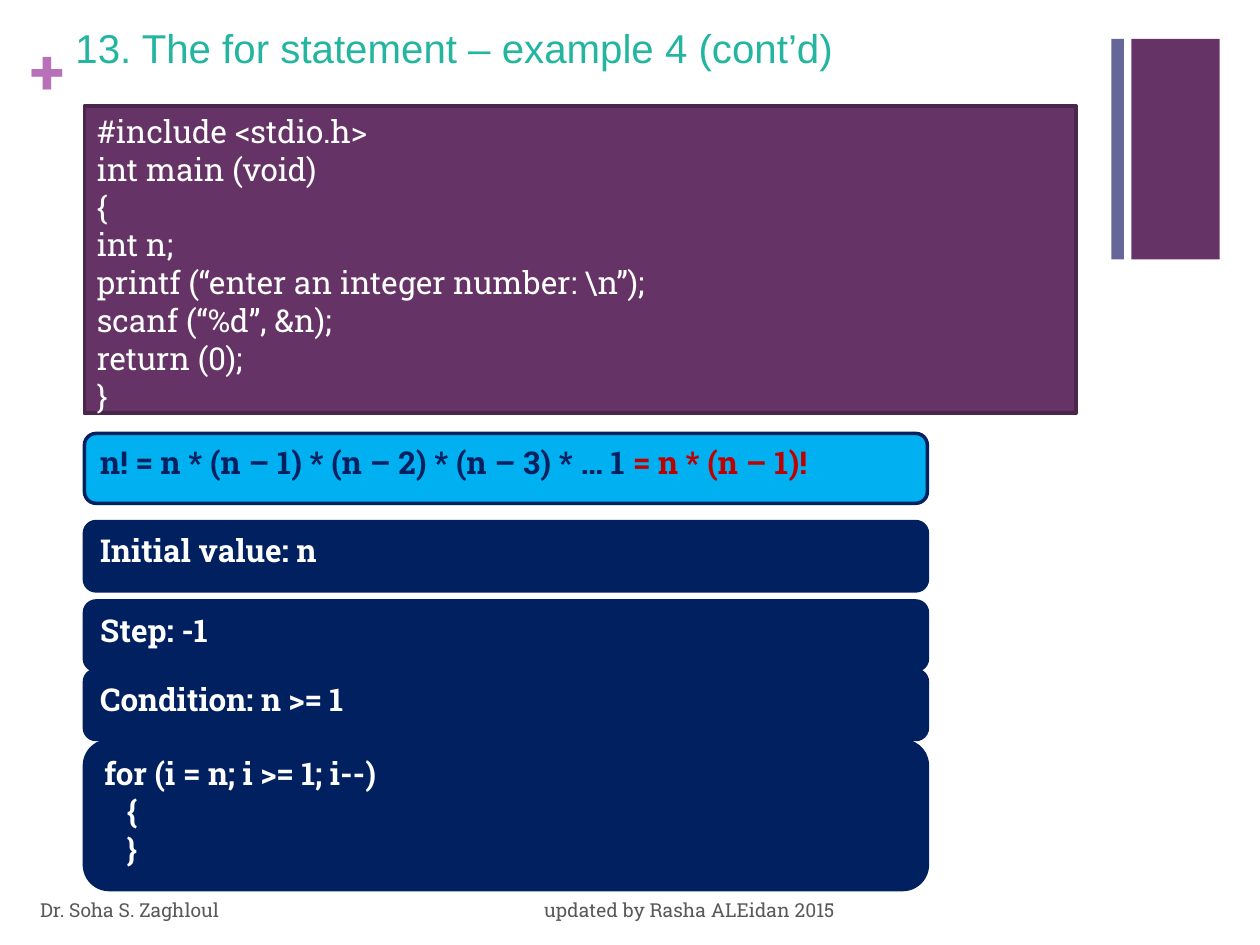
"""Build the slide on the for statement, example 4, with its code and loop steps."""
import pptx
import pptx.dml.color
import pptx.enum.shapes
import pptx.enum.text
import pptx.oxml
import pptx.oxml.ns
import pptx.util

RGBColor = pptx.dml.color.RGBColor
MSO_SHAPE = pptx.enum.shapes.MSO_SHAPE
MSO_ANCHOR = pptx.enum.text.MSO_ANCHOR
PP_ALIGN = pptx.enum.text.PP_ALIGN

WHITE = RGBColor(0xFF, 0xFF, 0xFF)
PURPLE = RGBColor(0x66, 0x33, 0x66)
DARK_PURPLE = RGBColor(0x4B, 0x26, 0x4B)
SLATE = RGBColor(0x66, 0x66, 0x99)
ORCHID = RGBColor(0xB8, 0x70, 0xB8)
TEAL = RGBColor(0x24, 0xB5, 0xA1)
SKY = RGBColor(0x00, 0xB0, 0xF0)
NAVY = RGBColor(0x00, 0x20, 0x60)
RED = RGBColor(0xC0, 0x00, 0x00)
GRAY = RGBColor(0x59, 0x59, 0x59)

presentation = pptx.Presentation()
presentation.slide_width = pptx.util.Inches(10)
presentation.slide_height = pptx.util.Inches(7.5)
column = presentation.slide_width / 100
row = presentation.slide_height / 100
slide = presentation.slides.add_slide(presentation.slide_layouts[6])


def add_box(left, top, width, height, kind=None, fill=None, line=None):
    place = [round(length) for length in (left * column, top * row, width * column, height * row)]
    if kind is None:
        return slide.shapes.add_textbox(*place)
    shape = slide.shapes.add_shape(kind, *place)
    shape.shadow.inherit = False
    shape.fill.solid()
    shape.fill.fore_color.rgb = fill
    if line is None:
        shape.line.fill.background()
    else:
        shape.line.color.rgb = line
        shape.line.width = pptx.util.Pt(2)
    return shape


def write_text(shape, lines, size=18, font="Roboto Slab", color=WHITE, bold=False,
               anchor=MSO_ANCHOR.TOP, margin=None):
    frame = shape.text_frame
    frame.word_wrap = True
    frame.vertical_anchor = anchor
    if margin is not None:
        frame.margin_left = frame.margin_right = frame.margin_top = frame.margin_bottom = margin
    for index, line in enumerate(lines):
        paragraph = frame.add_paragraph() if index else frame.paragraphs[0]
        paragraph.alignment = PP_ALIGN.LEFT
        for text, run_color in [(line, color)] if isinstance(line, str) else line:
            run = paragraph.add_run()
            run.text = text
            run.font.size = pptx.util.Pt(size)
            run.font.name = font
            run.font.bold = bold
            run.font.color.rgb = run_color


add_box(89.8, 4.13, 7, 23.33, MSO_SHAPE.RECTANGLE, PURPLE)
add_box(88.2, 4.13, 1, 23.33, MSO_SHAPE.RECTANGLE, SLATE)
write_text(add_box(2.4, 3.33, 2.9, 8.13), ["+"], size=36, color=ORCHID, bold=True, margin=0)

title = add_box(5, 1.73, 79.2, 6.53)
write_text(title, ["13. The for statement – example 4 (cont’d)"],
           size=23, font="Arial", color=TEAL, anchor=MSO_ANCHOR.MIDDLE)

code = add_box(6.7, 11.2, 78.7, 32.53, MSO_SHAPE.RECTANGLE, PURPLE, DARK_PURPLE)
write_text(code, [
    "#include <stdio.h>",
    "int main (void)",
    "{",
    "int n;",
    "printf (“enter an integer number: \\n”);",
    "scanf (“%d”, &n);",
    "return (0);",
    "}",
])

formula = [("n! = n * (n – 1) * (n – 2) * (n – 3) * … 1 ", NAVY), ("= n * (n – 1)!", RED)]
steps = [
    (45.87, 7.4, SKY, [formula]),
    (55.2, 7.33, NAVY, ["Initial value: n"]),
    (63.6, 7.33, NAVY, ["Step: -1"]),
    (70.93, 7.33, NAVY, ["Condition: n >= 1"]),
    (78.4, 15.73, NAVY, ["for (i = n; i >= 1; i--)", "   {", "   }"]),
]
for top, height, fill, lines in steps:
    step = add_box(6.7, top, 66.9, height, MSO_SHAPE.ROUNDED_RECTANGLE, fill, NAVY)
    write_text(step, lines, bold=True)

footer = add_box(2.2, 93.6, 67, 5.33)
properties = footer.text_frame.paragraphs[0]._p.get_or_add_pPr()
tab_list = pptx.oxml.parse_xml(f'<a:tabLst {pptx.oxml.ns.nsdecls("a")}/>')
tab_list.append(pptx.oxml.parse_xml(
    f'<a:tab {pptx.oxml.ns.nsdecls("a")} pos="{round(40 * column)}" algn="l"/>'))
properties.append(tab_list)
write_text(footer, ["Dr. Soha S. Zaghloul\tupdated by Rasha ALEidan 2015"],
           size=11, color=GRAY, anchor=MSO_ANCHOR.MIDDLE)

presentation.save("out.pptx")
